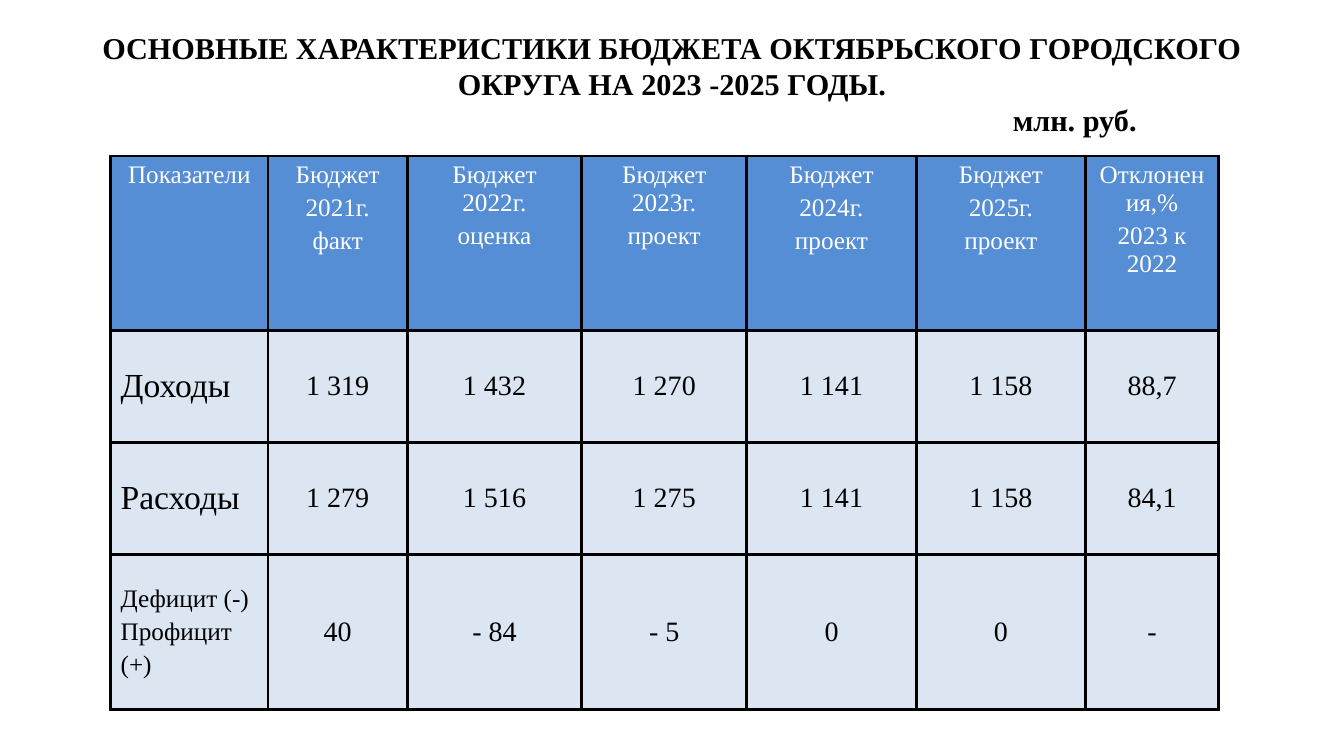
from lxml.etree import SubElement
from pptx import Presentation
from pptx.dml.color import RGBColor
from pptx.enum.text import MSO_ANCHOR, PP_ALIGN
from pptx.oxml.ns import qn
from pptx.util import Pt

FACE = "Times New Roman"


def style(para, size, color, align, bold=False):
    para.font.name = FACE
    para.font.size = Pt(size)
    para.font.bold = bold
    para.font.color.rgb = RGBColor.from_string(color)
    para.alignment = align


def outline(cell, color, width):
    """Draw a solid border on all four sides of a table cell."""
    props = cell._tc.get_or_add_tcPr()
    for spot, side in enumerate(("lnL", "lnR", "lnT", "lnB")):
        line = SubElement(props, qn(f"a:{side}"), w=str(Pt(width)))
        fill = SubElement(line, qn("a:solidFill"))
        SubElement(fill, qn("a:srgbClr"), val=color)
        props.insert(spot, line)


deck = Presentation()
deck.slide_width = Pt(960)
deck.slide_height = Pt(540)
slide = deck.slides.add_slide(deck.slide_layouts[6])

# Heading and unit of measure
heads = [
    ("ОСНОВНЫЕ ХАРАКТЕРИСТИКИ БЮДЖЕТА ОКТЯБРЬСКОГО ГОРОДСКОГО "
     "ОКРУГА НА 2023 -2025 ГОДЫ.", 48, 17, 864, 60, PP_ALIGN.CENTER),
    ("млн. руб.", 690, 69, 129, 34, PP_ALIGN.RIGHT),
]
for text, left, top, width, height, align in heads:
    frame = slide.shapes.add_textbox(
        Pt(left), Pt(top), Pt(width), Pt(height)).text_frame
    frame.word_wrap = True
    frame.text = text
    para = frame.paragraphs[0]
    style(para, 21.6, "000000", align, bold=True)
    para.line_spacing = Pt(26)

# Budget table
rows = [
    ["Показатели", "Бюджет\n2021г.\nфакт", "Бюджет 2022г.\nоценка",
     "Бюджет 2023г.\nпроект", "Бюджет\n2024г.\nпроект",
     "Бюджет\n2025г.\nпроект", "Отклонения,%\n2023 к 2022"],
    ["Доходы", "1 319", "1 432", "1 270", "1 141", "1 158", "88,7"],
    ["Расходы", "1 279", "1 516", "1 275", "1 141", "1 158", "84,1"],
    ["Дефицит (-)\nПрофицит\n(+)", "40", "- 84", "- 5", "0", "0", "-"],
]
widths = [112.5, 99.5, 124.5, 118, 121, 121, 95]
heights = [124.5, 80, 80, 111]
labels = [18, 24, 24, 18]

table = slide.shapes.add_table(
    len(rows), len(widths), Pt(79), Pt(111.5),
    Pt(sum(widths)), Pt(sum(heights))).table
for col, width in zip(table.columns, widths):
    col.width = Pt(width)
for row, height in zip(table.rows, heights):
    row.height = Pt(height)

for r, texts in enumerate(rows):
    for c, text in enumerate(texts):
        cell = table.cell(r, c)
        top = r == 0
        label = c == 0 and not top
        cell.text = text
        cell.fill.solid()
        cell.fill.fore_color.rgb = RGBColor.from_string(
            "558ED5" if top else "DCE6F2")
        cell.vertical_anchor = MSO_ANCHOR.TOP if top else MSO_ANCHOR.MIDDLE
        outline(cell, "000000", 2.25)
        size = labels[r] if top or label else 20
        for n, para in enumerate(cell.text_frame.paragraphs):
            style(para, size, "FFFFFF" if top else "000000",
                  PP_ALIGN.LEFT if label else PP_ALIGN.CENTER)
            para.space_before = Pt(3.6 if n else 0)

deck.save("out.pptx")
